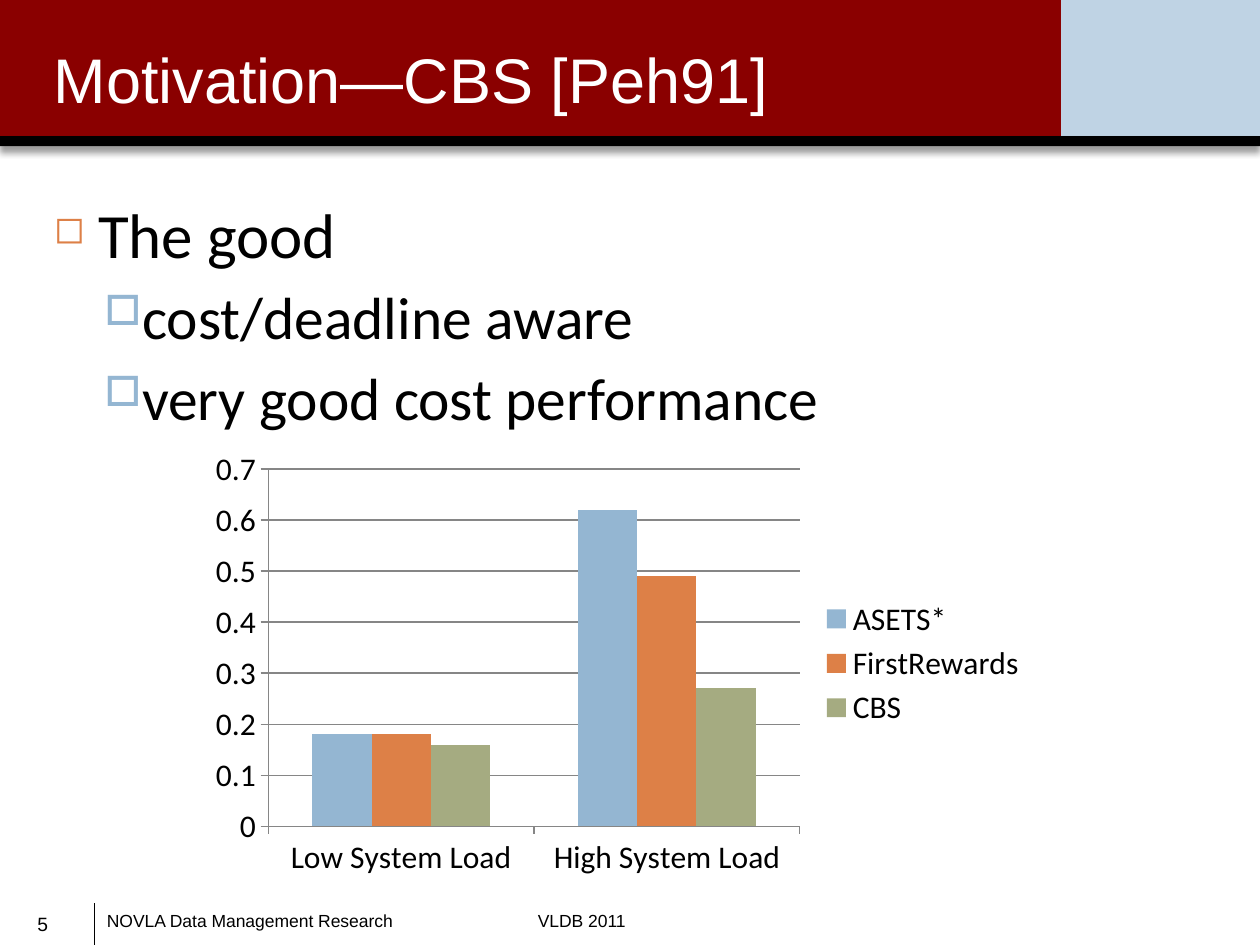
from lxml import etree
from pptx import Presentation
from pptx import util as u
from pptx.chart.data import CategoryChartData
from pptx.dml.color import RGBColor
from pptx.enum import chart as ch, shapes, text
from pptx.oxml import parse_xml
from pptx.oxml.ns import qn

BANDS = [
    (8.42, 0, 1.58, 1.08, "BFD3E4"),
    (0, 0, 8.42, 1.17, "8A0000"),
    (0, 1.08, 10, 0.35, "FFFFFF"),
    (0, 1.08, 10, 0.08, "000000"),
]
TITLE = "Motivation—CBS [Peh91]"
FOOTERS = [(0.75, "NOVLA Data Management Research"), (4.17, "VLDB 2011")]
PAGE_NUMBER = "5"
LEVELS = [
    dict(margin=0.35, hang=0.35, before=0, size=36, mark="◻", color="DD8047", scale=60),
    dict(margin=0.7, hang=0.3, before=5.5, size=34, mark="□", color="94B6D2", scale=70),
]
POINTS = [(0, "The good"), (1, "cost/deadline aware"), (1, "very good cost performance")]
CATEGORIES = ["Low System Load", "High System Load"]
SERIES = [
    ("ASETS*", (0.18, 0.62), "94B6D2"),
    ("FirstRewards", (0.18, 0.49), "DD8047"),
    ("CBS", (0.16, 0.27), "A5AB81"),
]
NS = 'xmlns:a="http://schemas.openxmlformats.org/drawingml/2006/main"'
SHADOW = (f'<a:effectLst {NS}><a:outerShdw blurRad="50800" dist="38100" dir="5400000">'
          '<a:srgbClr val="000000"><a:alpha val="40000"/></a:srgbClr>'
          '</a:outerShdw></a:effectLst>')


def rgb(value):
    return RGBColor.from_string(value)


def inches(*values):
    return [u.Inches(value) for value in values]


def style(font, name, size, color="000000"):
    font.name = name
    font.size = u.Pt(size)
    font.color.rgb = rgb(color)


def add_band(page, left, top, width, height, color):
    band = page.shapes.add_shape(shapes.MSO_SHAPE.RECTANGLE,
                                 *inches(left, top, width, height))
    band.shadow.inherit = False
    band.fill.solid()
    band.fill.fore_color.rgb = rgb(color)
    band.line.fill.background()
    return band


def add_label(page, place, words, size, color="000000", wrap=True,
              anchor=text.MSO_ANCHOR.TOP, align=text.PP_ALIGN.LEFT):
    box = page.shapes.add_textbox(*inches(*place))
    frame = box.text_frame
    frame.word_wrap = wrap
    frame.vertical_anchor = anchor
    frame.text = words
    para = frame.paragraphs[0]
    para.alignment = align
    style(para.runs[0].font, "Arial", size, color)


def add_bullet(para, level):
    props = para._p.get_or_add_pPr()
    props.set("marL", str(u.Inches(level["margin"])))
    props.set("indent", str(-u.Inches(level["hang"])))
    color = etree.SubElement(props, qn("a:buClr"))
    etree.SubElement(color, qn("a:srgbClr"), val=level["color"])
    etree.SubElement(props, qn("a:buSzPct"), val=str(level["scale"] * 1000))
    etree.SubElement(props, qn("a:buChar"), char=level["mark"])


def add_points(page):
    frame = page.shapes.add_textbox(*inches(0.33, 1.5, 9.5, 5.5)).text_frame
    frame.word_wrap = True
    frame.text = "\n".join(words for _, words in POINTS)
    for para, (depth, _) in zip(frame.paragraphs, POINTS):
        level = LEVELS[depth]
        para.level = depth
        add_bullet(para, level)
        para.space_before = u.Pt(level["before"])
        style(para.runs[0].font, "Calibri", level["size"])


def add_load_chart(page):
    data = CategoryChartData()
    data.categories = CATEGORIES
    for name, values, _ in SERIES:
        data.add_series(name, values)
    chart = page.shapes.add_chart(ch.XL_CHART_TYPE.COLUMN_CLUSTERED,
                                  *inches(1.58, 3.5, 6.67, 3.53), data).chart
    style(chart.font, "Calibri", 18)
    chart.has_title = False
    chart.has_legend = True
    chart.legend.position = ch.XL_LEGEND_POSITION.RIGHT
    chart.legend.include_in_layout = False
    plot = chart.plots[0]
    plot.vary_by_categories = False
    plot.gap_width = 150
    for series, (_, _, color) in zip(plot.series, SERIES):
        series.format.fill.solid()
        series.format.fill.fore_color.rgb = rgb(color)
    scale = chart.value_axis
    scale.minimum_scale, scale.maximum_scale, scale.major_unit = 0, 0.7, 0.1
    scale.has_major_gridlines = True
    for axis in (chart.category_axis, scale):
        axis.major_tick_mark = ch.XL_TICK_MARK.OUTSIDE
    for item in (chart.category_axis, scale, scale.major_gridlines):
        item.format.line.color.rgb = rgb("868686")
        item.format.line.width = u.Pt(0.75)


def main():
    deck = Presentation()
    deck.slide_width, deck.slide_height = inches(10, 7.5)
    page = deck.slides.add_slide(deck.slide_layouts[6])

    bands = [add_band(page, *band) for band in BANDS]
    props = bands[-1]._element.spPr
    props.replace(props.find(qn("a:effectLst")), parse_xml(SHADOW))

    middle = text.MSO_ANCHOR.MIDDLE
    add_label(page, (0.18, 7.08, 0.32, 0.5), PAGE_NUMBER, 11, wrap=False,
              anchor=middle, align=text.PP_ALIGN.CENTER)
    for left, words in FOOTERS:
        add_label(page, (left, 7.17, 3.08, 0.27), words, 10)
    divider = page.shapes.add_connector(shapes.MSO_CONNECTOR.STRAIGHT,
                                        *inches(0.75, 7.17, 0.75, 7.5))
    divider.line.color.rgb = rgb("000000")
    divider.line.width = u.Pt(0.5)
    etree.SubElement(divider._element.spPr, qn("a:effectLst"))

    add_label(page, (0.33, 0.08, 8, 1.08), TITLE, 36, "FFFFFF", anchor=middle)
    add_points(page)
    add_load_chart(page)
    deck.save("out.pptx")


if __name__ == "__main__":
    main()
